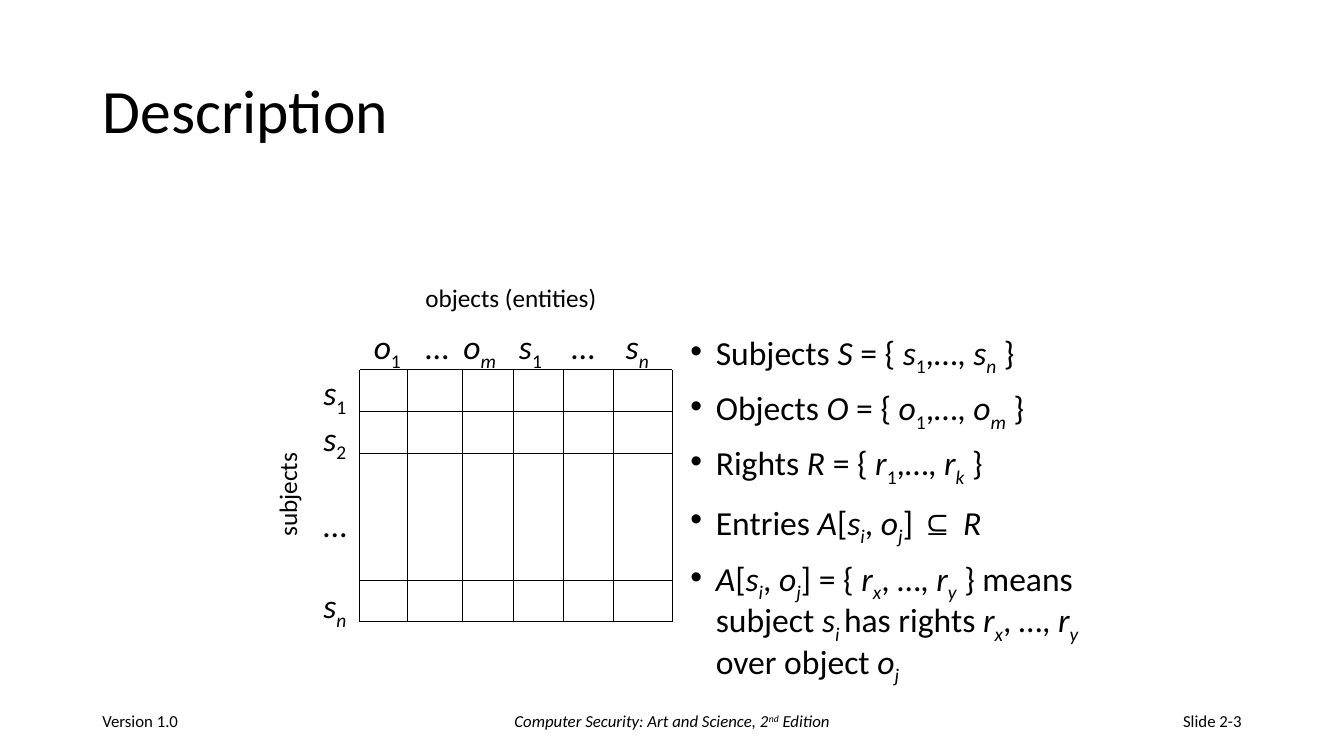
import pptx
import pptx.dml.color
import pptx.enum.shapes
import pptx.enum.text
import pptx.oxml
import pptx.oxml.ns
import pptx.util
from pptx.util import Cm

FONT = "Calibri"
BLACK = "000000"
ALIGN = pptx.enum.text.PP_ALIGN
MIDDLE = pptx.enum.text.MSO_ANCHOR.MIDDLE

# Each mark switches one style on or off within a text
MARKS = {"/": "italic", "_": "subscript", "^": "superscript",
         "~": "symbol", "#": "large"}

COLUMN_EDGES = (0, 1.19, 2.59, 3.86, 5.13, 6.4, 7.87)
ROW_EDGES = (0, 1.06, 2.1, 5.3, 6.35)
COLUMN_LABELS = "/o/_1_\t…\t/o_m_\ts/_1_\t…\t/s_n_/"
COLUMN_TABS = (1.3, 2.26, 3.66, 4.98, 6.35)
ROW_LABELS = (("/s/_1_", 0), ("/s/_2_", 0), ("…", 29), ("/s_n_/", 29))

DEFINITIONS = (
    "Subjects /S/ = { /s/_1_,…, /s_n_/ }",
    "Objects /O/ = { /o/_1_,…, /o_m_/ }",
    "Rights /R/ = { /r/_1_,…, /r_k_/ }",
    "Entries /A/[/s_i_/, /o_j_/] ~⊆~# #/R/",
    "/A/[/s_i_/, /o_j_/] = { /r_x_/, …, /r_y_/ } means subject "
    "/s_i _/has rights /r_x_/, …, /r_y_/ over object /o_j_/",
)


def color(value):
    return pptx.dml.color.RGBColor.from_string(value)


def add_run(paragraph, text, size, styles):
    run = paragraph.add_run()
    run.text = text
    font = run.font
    font.name = "Arial" if "symbol" in styles else FONT
    font.size = pptx.util.Pt(size + 4 if "large" in styles else size)
    font.italic = "italic" in styles
    font.color.rgb = color(BLACK)
    if "subscript" in styles:
        run._r.get_or_add_rPr().set("baseline", "-25000")
    elif "superscript" in styles:
        run._r.get_or_add_rPr().set("baseline", "30000")


def write(paragraph, marked_text, size):
    """Split the text at its marks and add one run for each style."""
    styles, text = set(), ""
    for character in marked_text:
        if character in MARKS:
            if text:
                add_run(paragraph, text, size, styles)
            text = ""
            styles ^= {MARKS[character]}
        else:
            text += character
    if text:
        add_run(paragraph, text, size, styles)


def add_properties(paragraph, *elements):
    properties = paragraph._p.get_or_add_pPr()
    namespace = pptx.oxml.ns.nsdecls("a")
    for element in elements:
        xml = element.replace("<a:", f"<a:", 1).replace(" ", f" {namespace} ", 1)
        properties.append(pptx.oxml.parse_xml(xml))
    return properties


def add_text_box(slide, left, top, width, height, wrap=True):
    shape = slide.shapes.add_textbox(Cm(left), Cm(top), Cm(width), Cm(height))
    shape.text_frame.word_wrap = wrap
    return shape


def add_label(slide, left, top, width, height, text, size, wrap=False):
    shape = add_text_box(slide, left, top, width, height, wrap)
    write(shape.text_frame.paragraphs[0], text, size)
    return shape


def add_line(slide, x1, y1, x2, y2):
    line = slide.shapes.add_connector(
        pptx.enum.shapes.MSO_CONNECTOR.STRAIGHT, Cm(x1), Cm(y1), Cm(x2), Cm(y2))
    line.line.color.rgb = color(BLACK)
    line.line.width = pptx.util.Pt(0.75)
    line._element.spPr.append(pptx.oxml.parse_xml(
        f"<a:effectLst {pptx.oxml.ns.nsdecls('a')}/>"))


def add_title(slide, left, top, width, height):
    title = slide.shapes.title
    title.left, title.top = Cm(left), Cm(top)
    title.width, title.height = Cm(width), Cm(height)
    frame = title.text_frame
    frame.auto_size = pptx.enum.text.MSO_AUTO_SIZE.NONE
    frame.vertical_anchor = MIDDLE
    paragraph = frame.paragraphs[0]
    paragraph.alignment = ALIGN.LEFT
    paragraph.line_spacing = 0.9
    write(paragraph, "Description", 44)


def add_matrix(slide, left, top):
    right, bottom = left + COLUMN_EDGES[-1], top + ROW_EDGES[-1]
    # Grid
    for edge in COLUMN_EDGES:
        add_line(slide, left + edge, top, left + edge, bottom)
    for edge in ROW_EDGES:
        add_line(slide, left, top + edge, right, top + edge)
    # Axis names
    add_label(slide, left + 1.4, top - 2.33, 4.88, 1.02, "objects (entities)", 18)
    subjects = add_label(slide, left - 3.15, top + 2.62, 2.64, 1.02, "subjects", 18)
    subjects.rotation = 270
    # Column labels, each at its own tab stop
    columns = add_text_box(slide, left + 0.1, top - 1.22, 7.9, 1.3)
    paragraph = columns.text_frame.paragraphs[0]
    stops = "".join(f'<a:tab pos="{Cm(stop)}" algn="l"/>' for stop in COLUMN_TABS)
    add_properties(paragraph, f'<a:tabLst >{stops}</a:tabLst>')
    write(paragraph, COLUMN_LABELS, 24)
    # Row labels
    rows = add_text_box(slide, left - 1.17, top - 0.07, 1.14, 6.4, wrap=False)
    frame = rows.text_frame
    for index, (text, gap) in enumerate(ROW_LABELS):
        paragraph = frame.add_paragraph() if index else frame.paragraphs[0]
        if gap:
            paragraph.space_before = pptx.util.Pt(gap)
        write(paragraph, text, 24)


def add_definitions(slide, left, top, width, height):
    frame = add_text_box(slide, left, top, width, height).text_frame
    for index, text in enumerate(DEFINITIONS):
        paragraph = frame.add_paragraph() if index else frame.paragraphs[0]
        properties = add_properties(
            paragraph, '<a:buFont typeface="Arial"/>', '<a:buChar char="•"/>')
        properties.set("marL", str(Cm(0.64)))
        properties.set("indent", str(-Cm(0.64)))
        paragraph.line_spacing = 0.9
        if index:
            paragraph.space_before = pptx.util.Pt(10)
        write(paragraph, text, 24)


def add_footer(slide, left, top, width, height):
    side, middle = 7.62, 11.43
    parts = (
        (left, side, ALIGN.LEFT, "Version 1.0"),
        (left + (width - middle) / 2, middle, ALIGN.CENTER,
         "/Computer Security: Art and Science, 2^nd^ Edition/"),
        (left + width - side, side, ALIGN.RIGHT, "Slide 2-3"),
    )
    for part_left, part_width, alignment, text in parts:
        shape = add_label(slide, part_left, top, part_width, height, text, 12, True)
        shape.text_frame.vertical_anchor = MIDDLE
        shape.text_frame.paragraphs[0].alignment = alignment


def main():
    presentation = pptx.Presentation()
    presentation.slide_width, presentation.slide_height = Cm(33.87), Cm(19.05)
    slide = presentation.slides.add_slide(presentation.slide_layouts[5])
    add_title(slide, 2.33, 1.01, 29.21, 3.68)
    add_matrix(slide, 9.07, 9.32)
    add_definitions(slide, 17.15, 8.25, 10.6, 8.9)
    add_footer(slide, 2.33, 17.65, 29.21, 1.01)
    presentation.save("out.pptx")


if __name__ == "__main__":
    main()
